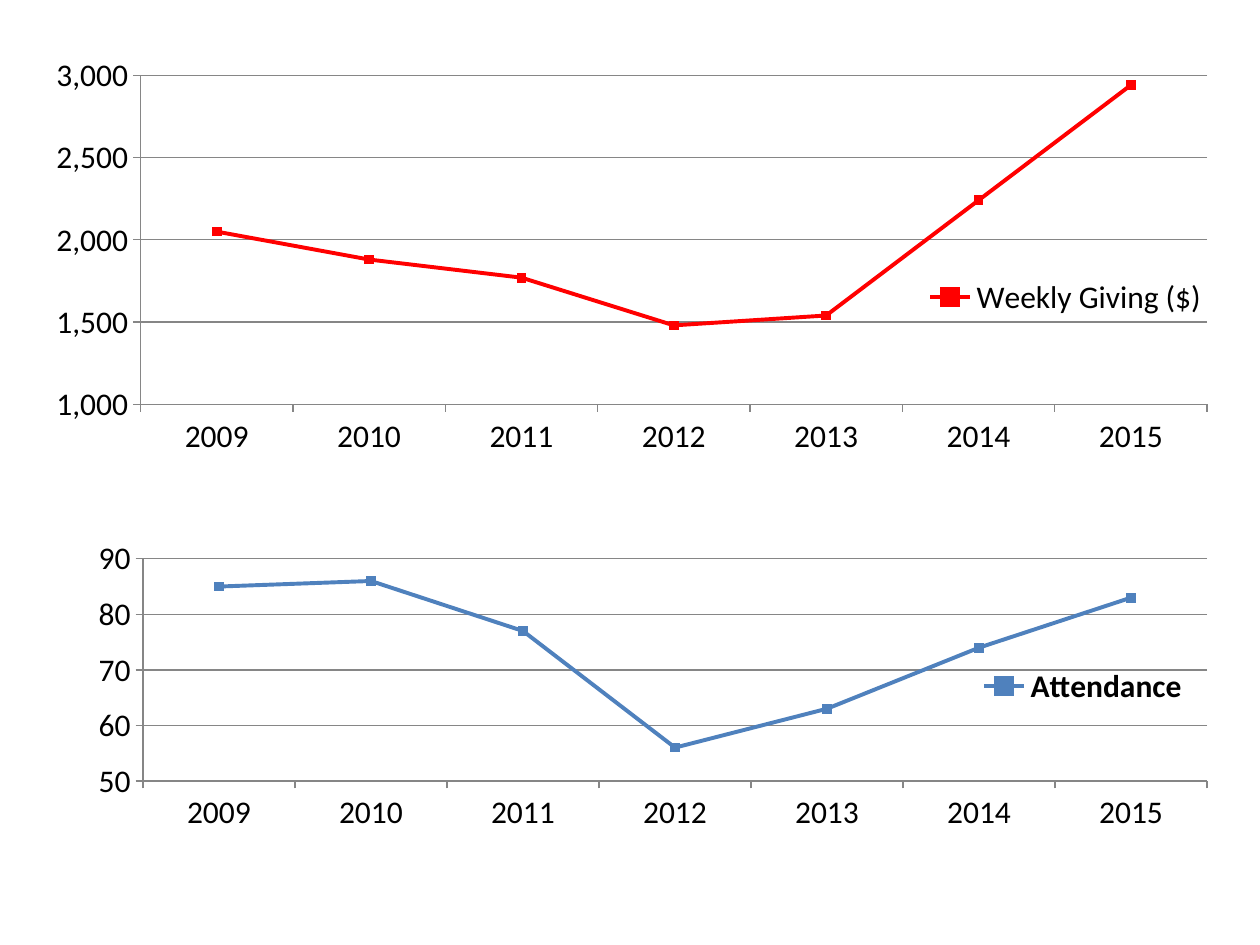
from dataclasses import dataclass

from lxml import etree
from pptx import Presentation
from pptx.chart.data import CategoryChartData
from pptx.dml.color import RGBColor
from pptx.enum.chart import (
    XL_CHART_TYPE as ChartType,
    XL_LEGEND_POSITION as LegendPosition,
    XL_MARKER_STYLE as MarkerStyle,
    XL_TICK_MARK as TickMark,
)
from pptx.oxml.ns import qn
from pptx.util import Inches, Pt


@dataclass(frozen=True)
class Theme:
    font: str = "Calibri"
    text_size: Pt = Pt(18)
    text: RGBColor = RGBColor(0, 0, 0)
    grid: RGBColor = RGBColor(0x86, 0x86, 0x86)
    attendance: RGBColor = RGBColor(0x4F, 0x81, 0xBD)
    giving: RGBColor = RGBColor(0xFF, 0, 0)
    series_width: Pt = Pt(2.25)
    grid_width: Pt = Pt(0.75)
    marker_size: int = 5


THEME = Theme()
YEARS = [str(year) for year in range(2009, 2016)]


def set_layout(parent, index, fractions, inner=False):
    """Place a chart part by x, y, width and height as fractions of the chart."""
    for old_layout in parent.findall(qn("c:layout")):
        parent.remove(old_layout)
    layout = etree.Element(qn("c:layout"))
    manual = etree.SubElement(layout, qn("c:manualLayout"))
    settings = [("layoutTarget", "inner")] if inner else []
    settings += [("xMode", "edge"), ("yMode", "edge")]
    settings += zip("xywh", map(str, fractions))
    for name, value in settings:
        etree.SubElement(manual, qn(f"c:{name}")).set("val", value)
    parent.insert(index, layout)


def style_line(line, color, width):
    line.color.rgb = color
    line.width = width


def style_axes(chart, minimum, maximum, step, number_format):
    for axis in (chart.category_axis, chart.value_axis):
        axis.major_tick_mark = TickMark.OUTSIDE
        axis.minor_tick_mark = TickMark.NONE
        style_line(axis.format.line, THEME.grid, THEME.grid_width)
    chart.category_axis.has_major_gridlines = False

    value_axis = chart.value_axis
    value_axis.minimum_scale = minimum
    value_axis.maximum_scale = maximum
    value_axis.major_unit = step
    value_axis.has_major_gridlines = True
    style_line(value_axis.major_gridlines.format.line, THEME.grid, THEME.grid_width)
    value_axis.tick_labels.number_format = number_format
    value_axis.tick_labels.number_format_is_linked = False


def style_series(chart, color):
    chart.plots[0].vary_by_categories = False
    series = chart.plots[0].series[0]
    series.smooth = False
    style_line(series.format.line, color, THEME.series_width)
    marker = series.marker
    marker.style = MarkerStyle.SQUARE
    marker.size = THEME.marker_size
    marker.format.fill.solid()
    marker.format.fill.fore_color.rgb = color
    marker.format.line.color.rgb = color


def style_font(font, bold=False):
    font.name = THEME.font
    font.size = THEME.text_size
    font.color.rgb = THEME.text
    font.bold = bold


def add_legend(chart, fractions, bold):
    chart.has_legend = True
    legend = chart.legend
    legend.position = LegendPosition.RIGHT
    legend.include_in_layout = False
    style_font(legend.font, bold)
    set_layout(legend._element, 1, fractions)


def add_line_chart(slide, box, name, values, color, scale, plot, legend,
                   number_format="General", bold_legend=False):
    data = CategoryChartData()
    data.categories = YEARS
    data.add_series(name, values)
    chart = slide.shapes.add_chart(
        ChartType.LINE_MARKERS_STACKED, *map(Inches, box), data).chart
    chart.has_title = False
    style_font(chart.font)
    style_axes(chart, *scale, number_format)
    style_series(chart, color)
    add_legend(chart, legend, bold_legend)
    set_layout(chart._chartSpace.chart.plotArea, 0, plot, inner=True)


def main():
    presentation = Presentation()
    presentation.slide_width = Inches(10)
    presentation.slide_height = Inches(7.5)
    slide = presentation.slides.add_slide(presentation.slide_layouts[6])

    # Attendance, lower half
    add_line_chart(
        slide, (0, 4.08, 11.46, 2.76), "Attendance",
        [85, 86, 77, 56, 63, 74, 83], THEME.attendance,
        scale=(50, 90, 10), plot=(0.099, 0.129, 0.737, 0.639),
        legend=(0.67, 0.42, 0.16, 0.15), bold_legend=True)

    # Weekly giving, upper half
    add_line_chart(
        slide, (0.12, 0.36, 11.58, 3.39), "Weekly Giving ($)",
        [2050, 1880, 1770, 1480, 1540, 2240, 2940], THEME.giving,
        scale=(1000, 3000, 500), plot=(0.086, 0.07, 0.731, 0.771),
        legend=(0.62, 0.53, 0.2, 0.12), number_format="#,##0")

    presentation.save("out.pptx")


if __name__ == "__main__":
    main()
